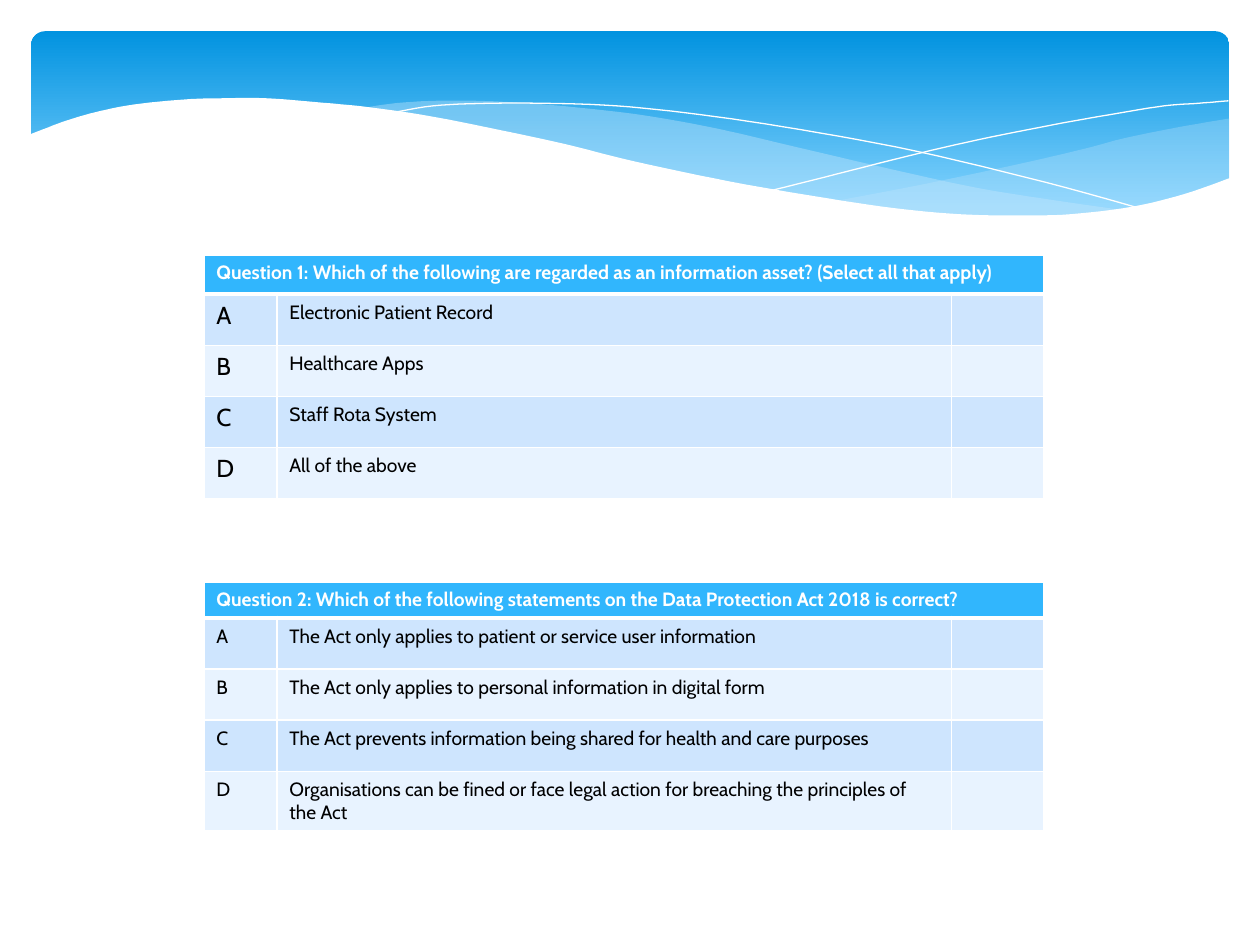
from pptx import Presentation
from pptx.dml.color import RGBColor
from pptx.enum.shapes import MSO_SHAPE
from pptx.oxml import parse_xml
from pptx.oxml.ns import nsdecls, qn
from pptx.util import Cm, Pt
from lxml import etree

ROUND = MSO_SHAPE.ROUNDED_RECTANGLE

THEME = {
    "font": "Cabin", "text": "000000", "white": "FFFFFF", "head": "31B6FD",
    "bands": ("CEE5FE", "E8F3FF"), "sky": ("0293E0", "83D3FE"), "mist": "C6E7FC",
    "body": 11, "big": 14, "thin": 1, "thick": 3,
}

QUIZ = [
    {"top": 5.14, "head": 0.79, "mark": THEME["big"],
     "ask": "Question 1: Which of the following are regarded as an information asset? (Select all that apply)",
     "picks": ["Electronic Patient Record", "Healthcare Apps", "Staff Rota System", "All of the above"]},
    {"top": 11.73, "head": 0.7, "mark": THEME["body"],
     "ask": "Question 2: Which of the following statements on the Data Protection Act 2018 is correct?",
     "picks": ["The Act only applies to patient or service user information",
               "The Act only applies to personal information in digital form",
               "The Act prevents information being shared for health and care purposes",
               "Organisations can be fined or face legal action for breaching the principles of the Act"]},
]
LEFT, COLS, ROW = 4.11, (1.47, 13.6, 1.86), 1.03

WAVES = [
    {"fill": THEME["mist"], "alpha": 29, "runs": [
        [(9.76, 0.94), (9.35, 1.01), (8.91, 1.1), (8.61, 1.18), (8.05, 1.31), (7.29, 1.47), (6.61, 1.6)],
        [(6.61, 1.6), (7.05, 1.65), (7.57, 1.7), (8.03, 1.72), (8.44, 1.71), (8.81, 1.67),
         (9.21, 1.6), (9.49, 1.52), (9.76, 1.41)]]},
    {"fill": THEME["mist"], "alpha": 40, "runs": [
        [(8.93, 1.67), (8.37, 1.59), (7.75, 1.49), (7.06, 1.34), (6.29, 1.16), (5.69, 1.02),
         (5.14, 0.92), (4.65, 0.86), (4.2, 0.82), (3.8, 0.8), (3.44, 0.8), (3.13, 0.82), (2.86, 0.86)],
        [(2.86, 0.86), (3.42, 0.94), (4.04, 1.06), (4.49, 1.16), (5.3, 1.35), (6.01, 1.5),
         (6.65, 1.61), (7.22, 1.68), (7.73, 1.72), (8.18, 1.73), (8.57, 1.71), (8.93, 1.67)]]},
    {"line": THEME["white"], "runs": [
        [(3.09, 0.9), (3.44, 0.84), (3.87, 0.82), (4.33, 0.82), (4.89, 0.84), (5.56, 0.91),
         (6.36, 1.03), (7.27, 1.2), (8.31, 1.45), (9.07, 1.66)]]},
    {"line": THEME["white"], "runs": [
        [(6.13, 1.51), (6.53, 1.41), (7.2, 1.24), (7.76, 1.11), (8.36, 0.99), (8.81, 0.91),
         (9.24, 0.84), (9.51, 0.82), (9.75, 0.8)]]},
    {"fill": THEME["white"], "alpha": 100, "runs": [
        [(9.77, 1.41), (9.4, 1.54), (8.99, 1.64), (8.5, 1.7), (8.09, 1.71), (7.61, 1.7),
         (7.08, 1.65), (6.48, 1.56), (5.79, 1.44), (5.03, 1.28), (4.47, 1.14), (3.91, 1.02),
         (3.4, 0.92), (2.92, 0.85), (2.5, 0.81), (2.11, 0.78), (1.77, 0.78), (1.46, 0.79),
         (1.06, 0.83), (0.76, 0.89), (0.52, 0.96), (0.36, 1.02), (0.23, 1.07)],
        [(0.23, 1.07), (0.23, 2.24)], [(0.23, 2.24), (9.77, 2.24)]]},
]
STEPS = 6


def tint(code):
    return RGBColor.from_string(code)


def smooth(run):
    pts = [run[0], *run, run[-1]]
    out = [run[0]]
    for a, b, c, d in zip(pts, pts[1:], pts[2:], pts[3:]):
        for step in range(1, STEPS + 1):
            t = step / STEPS
            out.append(tuple(
                (2 * q + (r - p) * t + (2 * p - 5 * q + 4 * r - s) * t ** 2
                 + (3 * q - p - 3 * r + s) * t ** 3) / 2
                for p, q, r, s in zip(a, b, c, d)))
    return out


def add_sky(slide):
    sky = slide.shapes.add_shape(ROUND, Cm(0.63), Cm(0.63), Cm(24.15), Cm(3.96))
    sky.adjustments[0] = 0.07
    sky.shadow.inherit = False
    sky.line.fill.background()
    sky.fill.gradient()
    sky.fill.gradient_angle = 270
    for stop, code, spot in zip(sky.fill.gradient_stops, THEME["sky"], (0, 0.9)):
        stop.color.rgb = tint(code)
        stop.position = spot


def add_wave(slide, wave):
    dots = [(x * 1000, y * 1000) for run in wave["runs"] for x, y in smooth(run)]
    pen = slide.shapes.build_freeform(*dots[0], scale=Cm(2.54) / 1000)
    pen.add_line_segments(dots[1:], close="fill" in wave)
    shape = pen.convert_to_shape()
    shape.shadow.inherit = False
    if "fill" in wave:
        shape.line.fill.background()
        shape.fill.solid()
        shape.fill.fore_color.rgb = tint(wave["fill"])
        if wave["alpha"] < 100:
            tone = shape.fill._xPr.find(qn("a:solidFill"))[0]
            etree.SubElement(tone, qn("a:alpha")).set("val", str(wave["alpha"] * 1000))
    else:
        shape.fill.background()
        shape.line.color.rgb = tint(wave["line"])
        shape.line.width = Pt(0)


def style(cell, fill, size, ink, bold, top, base):
    cell.fill.solid()
    cell.fill.fore_color.rgb = tint(fill)
    for run in cell.text_frame.paragraphs[0].runs:
        run.font.name = THEME["font"]
        run.font.size = Pt(size)
        run.font.bold = bold
        run.font.color.rgb = tint(ink)
    props = cell._tc.get_or_add_tcPr()
    edges = (("L", THEME["thin"]), ("R", THEME["thin"]), ("T", top), ("B", base))
    for spot, (side, width) in enumerate(edges):
        props.insert(spot, parse_xml(
            f'<a:ln{side} {nsdecls("a")} w="{Pt(width)}"><a:solidFill>'
            f'<a:srgbClr val="{THEME["white"]}"/></a:solidFill></a:ln{side}>'))


def add_quiz(slide, quiz):
    rows = [(quiz["ask"], "", "")]
    rows += [(mark, pick, "") for mark, pick in zip("ABCD", quiz["picks"])]
    highs = [quiz["head"]] + [ROW] * len(quiz["picks"])
    grid = slide.shapes.add_table(len(rows), len(COLS), Cm(LEFT), Cm(quiz["top"]),
                                  Cm(sum(COLS)), Cm(sum(highs))).table
    for col, wide in zip(grid.columns, COLS):
        col.width = Cm(wide)
    thin, thick = THEME["thin"], THEME["thick"]
    for r, (row, high) in enumerate(zip(rows, highs)):
        grid.rows[r].height = Cm(high)
        for c, text in enumerate(row):
            cell = grid.cell(r, c)
            cell.text_frame.text = text
            if r == 0:
                style(cell, THEME["head"], THEME["body"], THEME["white"], True, thin, thick)
            else:
                size = quiz["mark"] if c == 0 else THEME["body"]
                style(cell, THEME["bands"][(r - 1) % 2], size, THEME["text"], False,
                      thick if r == 1 else thin, thin)
    grid.cell(0, 0).merge(grid.cell(0, len(COLS) - 1))


def main():
    deck = Presentation()
    deck.slide_width, deck.slide_height = Cm(25.4), Cm(19.05)
    slide = deck.slides.add_slide(deck.slide_layouts[6])
    add_sky(slide)
    for wave in WAVES:
        add_wave(slide, wave)
    for quiz in QUIZ:
        add_quiz(slide, quiz)
    deck.save("out.pptx")


if __name__ == "__main__":
    main()
